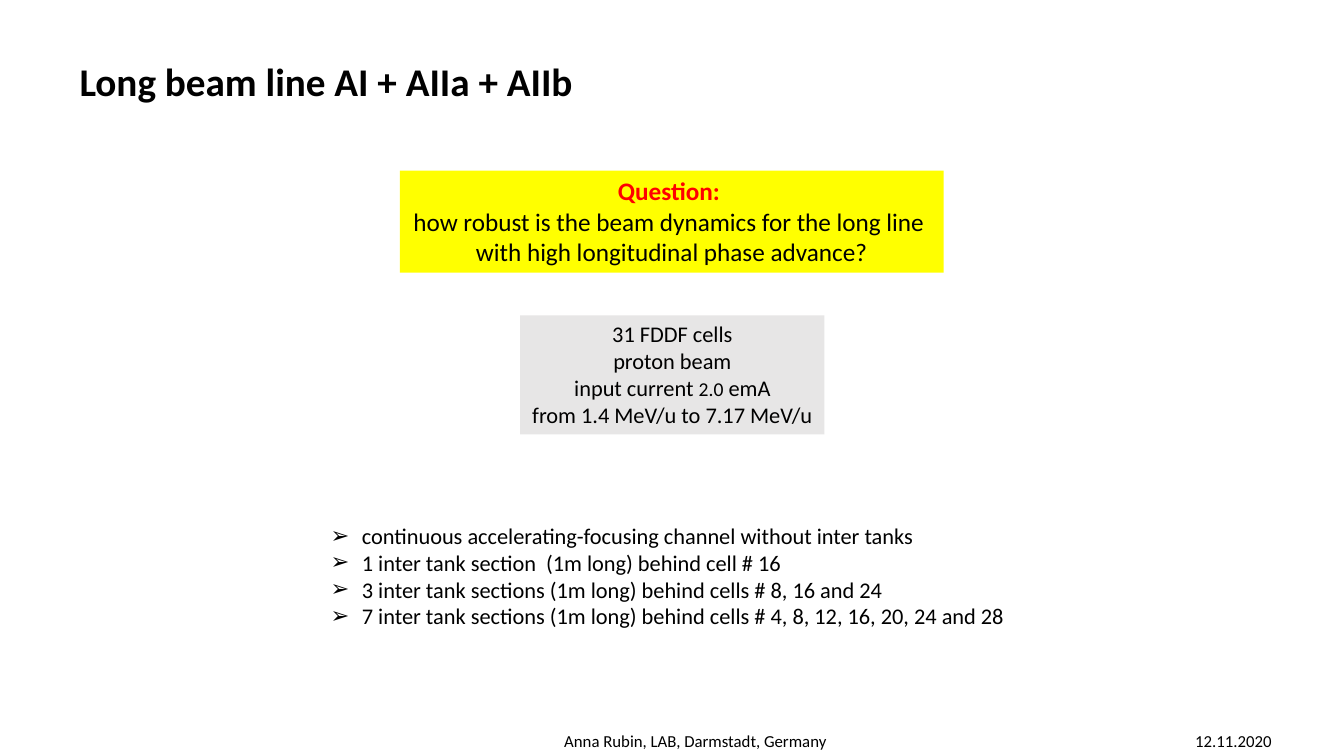
from dataclasses import dataclass

from lxml import etree
from pptx import Presentation
from pptx import util as u
from pptx.dml.color import RGBColor
from pptx.enum import shapes, text
from pptx.oxml.ns import qn


@dataclass(frozen=True)
class Theme:
    font: str = "Calibri"
    ink: str = "000000"
    accent: str = "FF0000"
    highlight: str = "FFFF00"
    panel: str = "E7E6E6"
    paper: str = "FFFFFF"
    title: int = 28
    question: int = 18
    body: int = 16
    small: int = 14
    footer: int = 12


class SlideBuilder:
    def __init__(self, prs, theme):
        self.theme = theme
        self.slide = prs.slides.add_slide(prs.slide_layouts[5])

    def style(self, runs, size, color=None, bold=False):
        for r in runs:
            r.font.name = self.theme.font
            r.font.size = u.Pt(size)
            r.font.bold = bold
            r.font.color.rgb = RGBColor.from_string(color or self.theme.ink)

    def set_text(self, sp, content, size, align, bold=False, wrap=False):
        tf = sp.text_frame
        tf.text = content
        tf.word_wrap = wrap
        tf.auto_size = text.MSO_AUTO_SIZE.SHAPE_TO_FIT_TEXT
        tf.vertical_anchor = text.MSO_ANCHOR.TOP
        for p in tf.paragraphs:
            p.alignment = align
            self.style(p.runs, size, bold=bold)
        return tf

    def title(self, content, left, top, width, height):
        sp = self.slide.shapes.title
        sp.left, sp.top, sp.width, sp.height = map(u.Cm, (left, top, width, height))
        self.set_text(sp, content, self.theme.title, text.PP_ALIGN.LEFT, bold=True)

    def panel(self, lines, left, top, width, height, fill, size,
              align=text.PP_ALIGN.CENTER, wrap=False):
        sp = self.slide.shapes.add_shape(
            shapes.MSO_SHAPE.RECTANGLE, *map(u.Cm, (left, top, width, height)))
        sp.shadow.inherit = False
        sp.fill.solid()
        sp.fill.fore_color.rgb = RGBColor.from_string(fill)
        sp.line.fill.background()
        return self.set_text(sp, "\n".join(lines), size, align, wrap=wrap)

    def bullets(self, items, left, top, width, height, indent):
        sp = self.slide.shapes.add_textbox(*map(u.Cm, (left, top, width, height)))
        tf = self.set_text(sp, "\n".join(items), self.theme.body, text.PP_ALIGN.LEFT)
        for p in tf.paragraphs:
            pPr = p._p.get_or_add_pPr()
            pPr.set("marL", str(u.Cm(indent)))
            pPr.set("indent", str(-u.Cm(indent)))
            etree.SubElement(pPr, qn("a:buFont"), typeface=self.theme.font)
            etree.SubElement(pPr, qn("a:buChar"), char="➢")

    def footer(self, author, date, left, top, width, height, tab):
        """Author on the left, date against a right tab stop."""
        tf = self.panel([f"{author}\t{date}"], left, top, width, height,
                        self.theme.paper, self.theme.footer,
                        text.PP_ALIGN.LEFT, wrap=True)
        pPr = tf.paragraphs[0]._p.get_or_add_pPr()
        tabs = etree.SubElement(pPr, qn("a:tabLst"))
        etree.SubElement(tabs, qn("a:tab"), pos=str(u.Cm(tab)), algn="r")


def main():
    prs = Presentation()
    prs.slide_width, prs.slide_height = u.Cm(33.87), u.Cm(19.05)
    theme = Theme()
    s = SlideBuilder(prs, theme)

    s.title("Long beam line AI + AIIa + AIIb", 1.75, 1.32, 13.34, 1.45)

    question = s.panel(
        ["Question: ",
         "how robust is the beam dynamics for the long line ",
         "with high longitudinal phase advance?"],
        10.08, 4.3, 13.7, 2.57, theme.highlight, theme.question)
    s.style(question.paragraphs[0].runs, theme.question, theme.accent, bold=True)

    beam = s.panel(
        ["31 FDDF cells", "proton beam", " input current ",
         "from 1.4 MeV/u to 7.17 MeV/u"],
        13.11, 7.95, 7.67, 3, theme.panel, theme.body)
    current = beam.paragraphs[2]
    for content, size in (("2.0", theme.small), (" emA ", theme.body)):
        r = current.add_run()
        r.text = content
        s.style([r], size)

    s.bullets(
        ["continuous accelerating-focusing channel without inter tanks",
         "1 inter tank section  (1m long) behind cell # 16",
         "3 inter tank sections (1m long) behind cells # 8, 16 and 24",
         "7 inter tank sections (1m long) behind cells # 4, 8, 12, 16, 20, 24 and 28"],
        8.08, 13.03, 17.7, 3.76, indent=0.79)

    s.footer("Anna Rubin, LAB, Darmstadt, Germany", "12.11.2020",
             13.97, 18.29, 18.39, 0.76, tab=17.83)

    prs.save("out.pptx")


if __name__ == "__main__":
    main()
